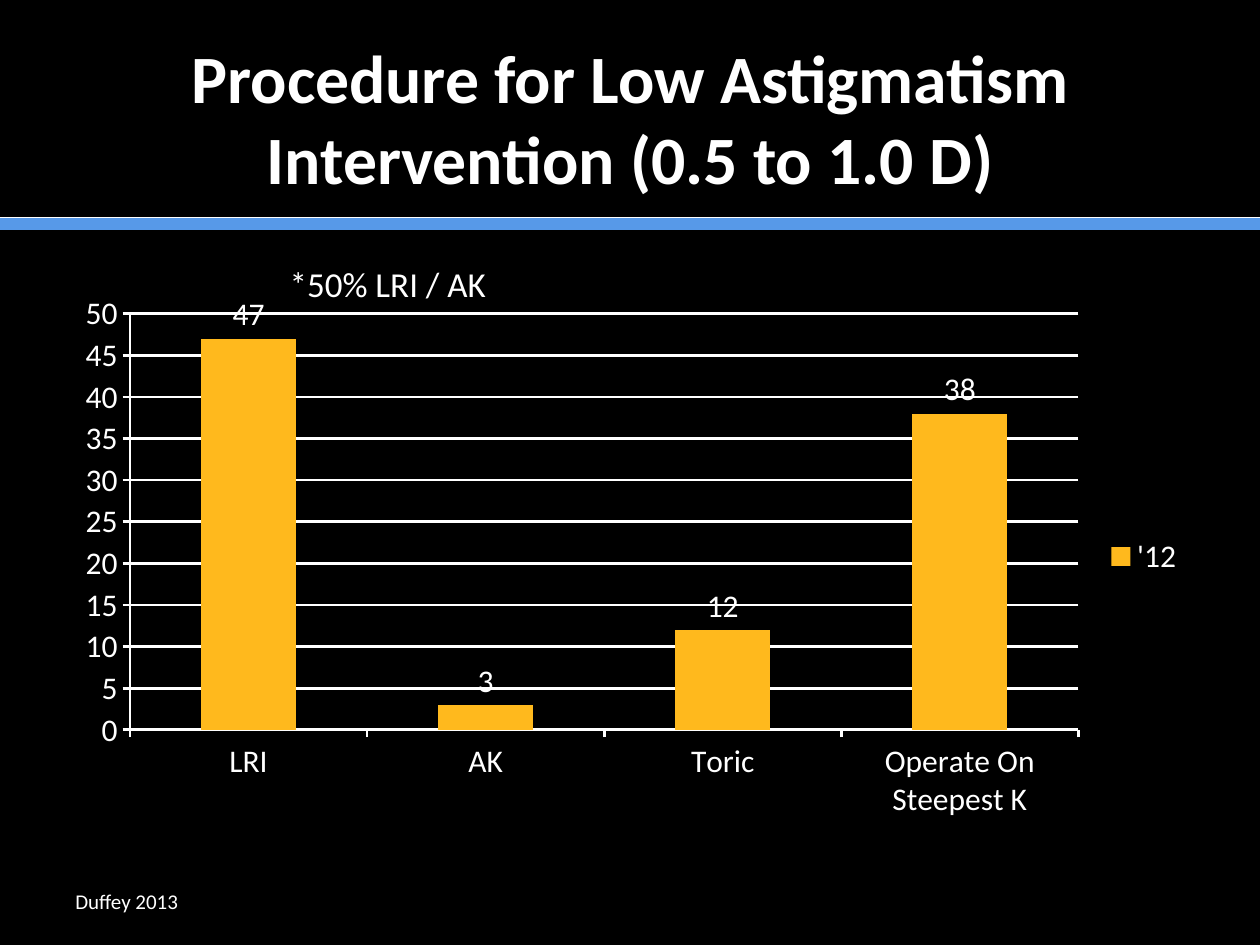
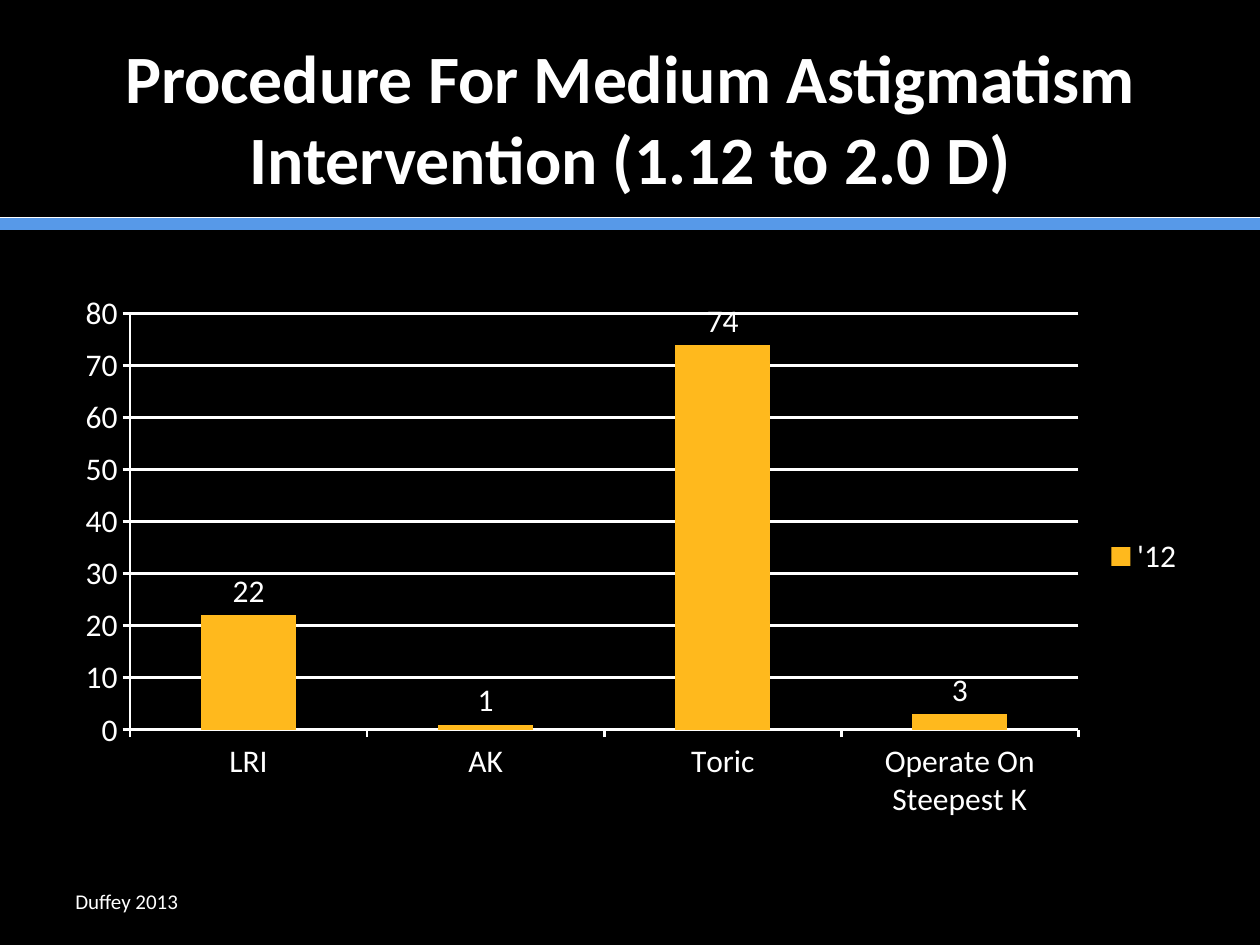
from lxml import etree
from pptx import Presentation
from pptx.chart.data import CategoryChartData as ChartData
from pptx.dml.color import RGBColor
from pptx.enum.chart import XL_CHART_TYPE as Kind
from pptx.enum.chart import XL_LABEL_POSITION as Spot
from pptx.enum.chart import XL_LEGEND_POSITION as Side
from pptx.enum.chart import XL_TICK_MARK as Tick
from pptx.enum.shapes import MSO_CONNECTOR as Link
from pptx.enum.text import MSO_ANCHOR as Anchor
from pptx.enum.text import MSO_AUTO_SIZE as Fit
from pptx.enum.text import PP_ALIGN as Align
from pptx.oxml.ns import qn
from pptx.util import Cm, Pt

BLACK = RGBColor(0x00, 0x00, 0x00)
WHITE = RGBColor(0xFF, 0xFF, 0xFF)
BLUE = RGBColor(0x57, 0x99, 0xE8)
GOLD = RGBColor(0xFF, 0xB9, 0x1D)
FACE = "Calibri"

WIDTH, HEIGHT = Cm(25.4), Cm(19.05)
EDGE = Cm(1.27)
TITLE = (EDGE, Cm(0.76), WIDTH - 2 * EDGE, Cm(3.18))
PLOT = (EDGE, Cm(5.72), WIDTH - 2 * EDGE, Cm(11))
SOURCE = (EDGE, Cm(17.65), Cm(8.05), Cm(1.02))

GROUPS = ("LRI", "AK", "Toric", "Operate On Steepest K")
PAGES = (
    ("Procedure for Low Astigmatism Intervention (0.5 to 1.0 D)",
     (47, 3, 12, 38), "*50% LRI / AK"),
    ("Procedure For Medium Astigmatism Intervention (1.12 to 2.0 D)",
     (22, 1, 74, 3), None),
)


def style(font, size, bold=False):
    font.name, font.size, font.bold = FACE, Pt(size), bold
    font.color.rgb = WHITE


def write(shape, text, size=12, bold=False, align=Align.LEFT,
          anchor=Anchor.MIDDLE):
    frame = shape.text_frame
    frame.word_wrap = True
    frame.auto_size = Fit.NONE
    frame.vertical_anchor = anchor
    line = frame.paragraphs[0]
    line.alignment = align
    run = line.add_run()
    run.text = text
    style(run.font, size, bold)


def rule(slide, top, color, weight):
    line = slide.shapes.add_connector(Link.STRAIGHT, 0, top, WIDTH, top)
    line.line.color.rgb = color
    line.line.width = Pt(weight)
    etree.SubElement(line.element.spPr, qn("a:effectLst"))


def head(slide, box, text):
    """Title with the double rule below it."""
    left, top, width, height = box
    base = top + height
    rule(slide, base + Cm(0.58), BLUE, 7)
    rule(slide, base + Cm(0.45), WHITE, 0.5)
    title = slide.shapes.title
    title.left, title.top, title.width, title.height = box
    write(title, text, size=38.7, bold=True, align=Align.CENTER)


def bars(slide, box, values):
    """Column chart of procedure shares."""
    data = ChartData()
    data.categories = GROUPS
    data.add_series("'12", values)
    chart = slide.shapes.add_chart(Kind.COLUMN_CLUSTERED, *box, data).chart
    style(chart.font, 18)
    chart.has_title = False
    chart.has_legend = True
    chart.legend.position = Side.RIGHT
    chart.legend.include_in_layout = False

    plot = chart.plots[0]
    plot.gap_width = 150
    plot.vary_by_categories = False
    fill = plot.series[0].format.fill
    fill.solid()
    fill.fore_color.rgb = GOLD
    plot.has_data_labels = True
    labels = plot.data_labels
    labels.show_value = True
    labels.position = Spot.OUTSIDE_END
    style(labels.font, 18)

    # Axes and grid
    rows = chart.value_axis
    rows.has_major_gridlines = True
    for axis in (chart.category_axis, rows):
        axis.major_tick_mark = Tick.OUTSIDE
        axis.minor_tick_mark = Tick.NONE
    for part in (chart.category_axis, rows, rows.major_gridlines):
        part.format.line.color.rgb = WHITE
        part.format.line.width = Pt(1.5)


def note(slide, box, text):
    """Remark above the first columns of the chart."""
    left, top = box[:2]
    area = slide.shapes.add_textbox(left + Cm(4.32), top - Cm(0.56),
                                    Cm(5.08), Cm(1.12))
    write(area, text, size=20, anchor=Anchor.TOP)


def page(deck, title, values, remark):
    slide = deck.slides.add_slide(deck.slide_layouts[5])
    head(slide, TITLE, title)
    bars(slide, PLOT, values)
    write(slide.shapes.add_textbox(*SOURCE), "Duffey 2013")
    if remark:
        note(slide, PLOT, remark)


def main():
    deck = Presentation()
    deck.slide_width, deck.slide_height = WIDTH, HEIGHT
    back = deck.slide_master.background.fill
    back.solid()
    back.fore_color.rgb = BLACK
    for title, values, remark in PAGES:
        page(deck, title, values, remark)
    deck.save("out.pptx")


if __name__ == "__main__":
    main()
